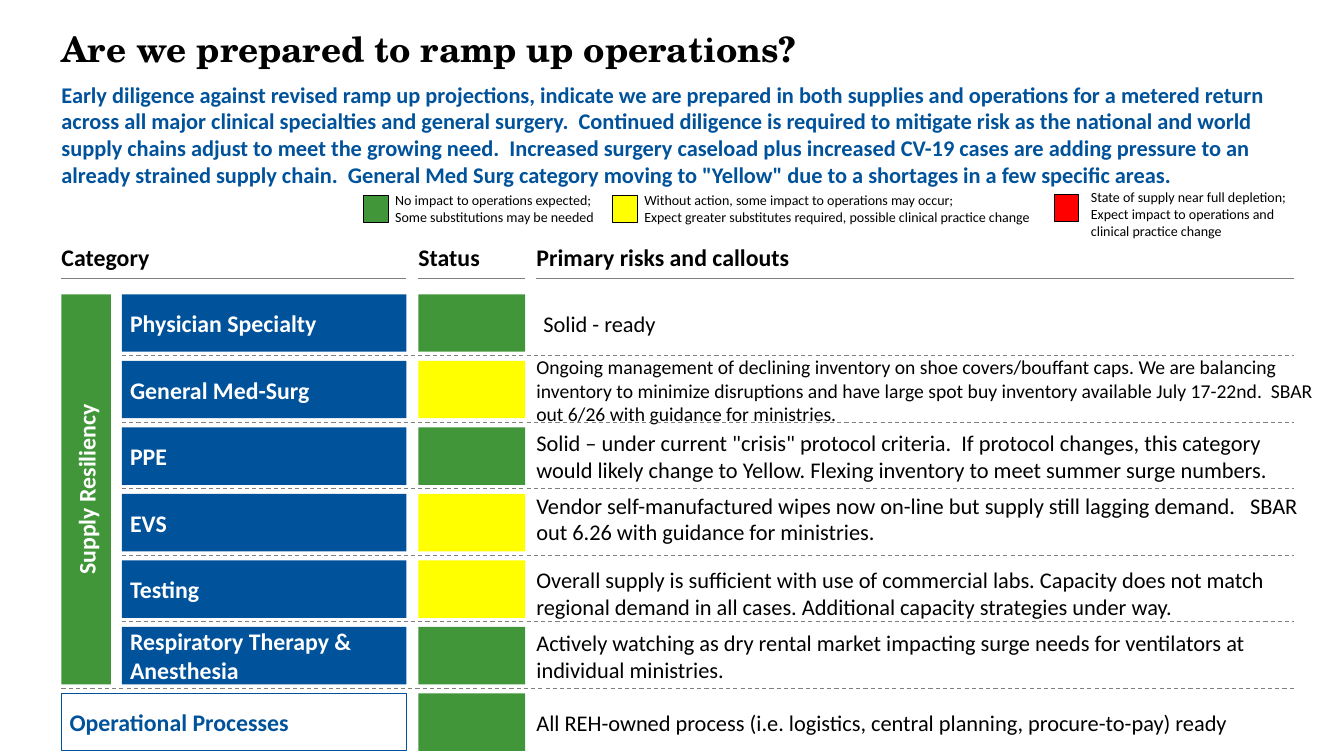
from dataclasses import dataclass

from lxml import etree
from pptx import Presentation
from pptx.dml.color import RGBColor
from pptx.enum.dml import MSO_LINE
from pptx.enum.shapes import MSO_CONNECTOR, MSO_SHAPE
from pptx.enum.text import MSO_ANCHOR, PP_ALIGN
from pptx.oxml.ns import qn
from pptx.util import Inches, Pt

RECTANGLE = MSO_SHAPE.RECTANGLE
STRAIGHT = MSO_CONNECTOR.STRAIGHT
DASH = MSO_LINE.DASH
TOP, MIDDLE, BOTTOM = MSO_ANCHOR.TOP, MSO_ANCHOR.MIDDLE, MSO_ANCHOR.BOTTOM
LEFT, CENTER = PP_ALIGN.LEFT, PP_ALIGN.CENTER

BLACK = RGBColor(0x00, 0x00, 0x00)
WHITE = RGBColor(0xFF, 0xFF, 0xFF)
GRAY = RGBColor(0x80, 0x80, 0x80)
BLUE = RGBColor(0x00, 0x52, 0x9B)
GREEN = RGBColor(0x41, 0x96, 0x39)
YELLOW = RGBColor(0xFF, 0xFF, 0x00)
RED = RGBColor(0xFF, 0x00, 0x00)

BODY_FONT, TITLE_FONT = "Calibri", "TeX Gyre Schola"

# Grid, in inches
SLIDE_WIDTH, SLIDE_HEIGHT = 13.33, 7.5
MARGIN, RIGHT_EDGE = 0.61, 12.83
CATEGORY_LEFT, CATEGORY_RIGHT = 1.21, 4.03
STATUS_LEFT, STATUS_WIDTH = 4.15, 1.06
CALLOUT_LEFT = 5.32
CALLOUT_WIDTH = RIGHT_EDGE - CALLOUT_LEFT
HEADER_TOP, HEADER_HEIGHT, HEADER_RULE = 2.45, 0.24, 2.76
ROW_TOP, ROW_PITCH, ROW_HEIGHT = 2.92, 0.66, 0.57
RULE_OFFSET = 0.05
BAR_WIDTH = 0.49
CELL_PADDING = 0.08

TITLE = "Are we prepared to ramp up operations?"
SUMMARY = (
    "Early diligence against revised ramp up projections, indicate we are prepared in both "
    "supplies and operations for a metered return across all major clinical specialties and "
    "general surgery.  Continued diligence is required to mitigate risk as the national and "
    "world supply chains adjust to meet the growing need.  Increased surgery caseload plus "
    "increased CV-19 cases are adding pressure to an already strained supply chain.  General "
    'Med Surg category moving to "Yellow" due to a shortages in a few specific areas.'
)


@dataclass
class Row:
    category: str
    status: RGBColor
    callout: str
    size: int = 16
    width: float = CALLOUT_WIDTH
    indent: float = 0
    shift: float = 0


ROWS = [
    Row("Physician Specialty", GREEN, "Solid - ready", indent=0.07),
    Row("General Med-Surg", YELLOW,
        "Ongoing management of declining inventory on shoe covers/bouffant caps. We are "
        "balancing inventory to minimize disruptions and have large spot buy inventory "
        "available July 17-22nd.  SBAR out 6/26 with guidance for ministries.",
        size=14, width=7.96, shift=0.01),
    Row("PPE", GREEN,
        'Solid – under current "crisis" protocol criteria.  If protocol changes, this category '
        "would likely change to Yellow. Flexing inventory to meet summer surge numbers."),
    Row("EVS", YELLOW,
        "Vendor self-manufactured wipes now on-line but supply still lagging demand.   SBAR "
        "out 6.26 with guidance for ministries.", width=7.89, shift=-0.04),
    Row("Testing", YELLOW,
        "Overall supply is sufficient with use of commercial labs. Capacity does not match "
        "regional demand in all cases. Additional capacity strategies under way.", shift=0.04),
    Row("Respiratory Therapy & Anesthesia", GREEN,
        "Actively watching as dry rental market impacting surge needs for ventilators at "
        "individual ministries.", width=7.75),
    Row("Operational Processes", GREEN,
        "All REH-owned process (i.e. logistics, central planning, procure-to-pay) ready"),
]

# Swatch left, swatch top, text left, text top, text width, text height
LEGEND = [
    (GREEN, 3.61, 1.94, 3.92, 1.92, 2.06, 0.3,
     ["No impact to operations expected;", "Some substitutions may be needed"]),
    (YELLOW, 6.08, 1.94, 6.39, 1.92, 3.97, 0.3,
     ["Without action, some impact to operations may occur;",
      "Expect greater substitutes required, possible clinical practice change"]),
    (RED, 10.46, 1.93, 10.82, 1.8, 2.01, 0.65,
     ["State of supply near full depletion;", "Expect impact to operations and",
      "clinical practice change"]),
]


def write(shape, lines, size, color=BLACK, bold=False, anchor=MIDDLE, padding=0.0,
          align=LEFT, font=BODY_FONT):
    frame = shape.text_frame
    frame.word_wrap = True
    frame.vertical_anchor = anchor
    frame.margin_left = frame.margin_right = Inches(padding)
    frame.margin_top = frame.margin_bottom = Inches(padding)
    frame.text = "\n".join(lines)
    for paragraph in frame.paragraphs:
        paragraph.alignment = align
        paragraph.font.name = font
        paragraph.font.size = Pt(size)
        paragraph.font.bold = bold
        paragraph.font.color.rgb = color


def add_text(slide, left, top, width, height, lines, size, **style):
    box = slide.shapes.add_textbox(Inches(left), Inches(top), Inches(width), Inches(height))
    write(box, lines, size, **style)


def add_box(slide, left, top, width, height, fill, line=None):
    shape = slide.shapes.add_shape(
        RECTANGLE, Inches(left), Inches(top), Inches(width), Inches(height))
    shape.shadow.inherit = False
    shape.fill.solid()
    shape.fill.fore_color.rgb = fill
    if line is None:
        shape.line.fill.background()
    else:
        shape.line.color.rgb = line
        shape.line.width = Pt(0.75)
    return shape


def add_rule(slide, left, right, top, dash=None):
    rule = slide.shapes.add_connector(
        STRAIGHT, Inches(left), Inches(top), Inches(right), Inches(top))
    rule.line.color.rgb = GRAY
    rule.line.width = Pt(0.75)
    if dash is not None:
        rule.line.dash_style = dash
    etree.SubElement(rule._element.spPr, qn("a:effectLst"))


def add_header(slide, left, right, label):
    add_text(slide, left, HEADER_TOP, right - left, HEADER_HEIGHT, [label], 17,
             bold=True, anchor=BOTTOM)
    add_rule(slide, left, right, HEADER_RULE)


def add_row(slide, index, row):
    top = ROW_TOP + index * ROW_PITCH
    is_last = index == len(ROWS) - 1
    left = MARGIN if is_last else CATEGORY_LEFT
    fill, ink, outline = (WHITE, BLUE, BLUE) if is_last else (BLUE, WHITE, None)
    # Rule above every row but the first
    if index:
        add_rule(slide, left, RIGHT_EDGE, top - RULE_OFFSET, DASH)
    category = add_box(slide, left, top, CATEGORY_RIGHT - left, ROW_HEIGHT, fill, outline)
    write(category, [row.category], 17, color=ink, bold=True, padding=CELL_PADDING)
    add_box(slide, STATUS_LEFT, top, STATUS_WIDTH, ROW_HEIGHT, row.status)
    add_text(slide, CALLOUT_LEFT + row.indent, top + row.shift, row.width, ROW_HEIGHT,
             [row.callout], row.size)


def add_side_bar(slide, label):
    # Laid out flat, then turned about its centre
    length = (len(ROWS) - 2) * ROW_PITCH + ROW_HEIGHT
    left = MARGIN + (BAR_WIDTH - length) / 2
    top = ROW_TOP + (length - BAR_WIDTH) / 2
    bar = add_box(slide, left, top, length, BAR_WIDTH, GREEN)
    bar.rotation = 270
    write(bar, [label], 17, color=WHITE, bold=True, padding=CELL_PADDING, align=CENTER)


def main():
    presentation = Presentation()
    presentation.slide_width = Inches(SLIDE_WIDTH)
    presentation.slide_height = Inches(SLIDE_HEIGHT)
    slide = presentation.slides.add_slide(presentation.slide_layouts[6])

    # Title and summary
    add_text(slide, MARGIN, 0.27, 12.12, 0.42, [TITLE], 25, bold=True, anchor=TOP,
             font=TITLE_FONT)
    add_text(slide, MARGIN, 0.8, 12.3, 1.08, [SUMMARY], 16, color=BLUE, bold=True, anchor=TOP)

    # Legend
    for color, left, top, *text_area, lines in LEGEND:
        add_box(slide, left, top, 0.24, 0.27, color, BLACK)
        add_text(slide, *text_area, lines, 10)

    # Status grid
    add_header(slide, MARGIN, CATEGORY_RIGHT, "Category")
    add_header(slide, STATUS_LEFT, STATUS_LEFT + STATUS_WIDTH, "Status")
    add_header(slide, CALLOUT_LEFT, RIGHT_EDGE, "Primary risks and callouts")
    add_side_bar(slide, "Supply Resiliency")
    for index, row in enumerate(ROWS):
        add_row(slide, index, row)

    presentation.save("out.pptx")


if __name__ == "__main__":
    main()
